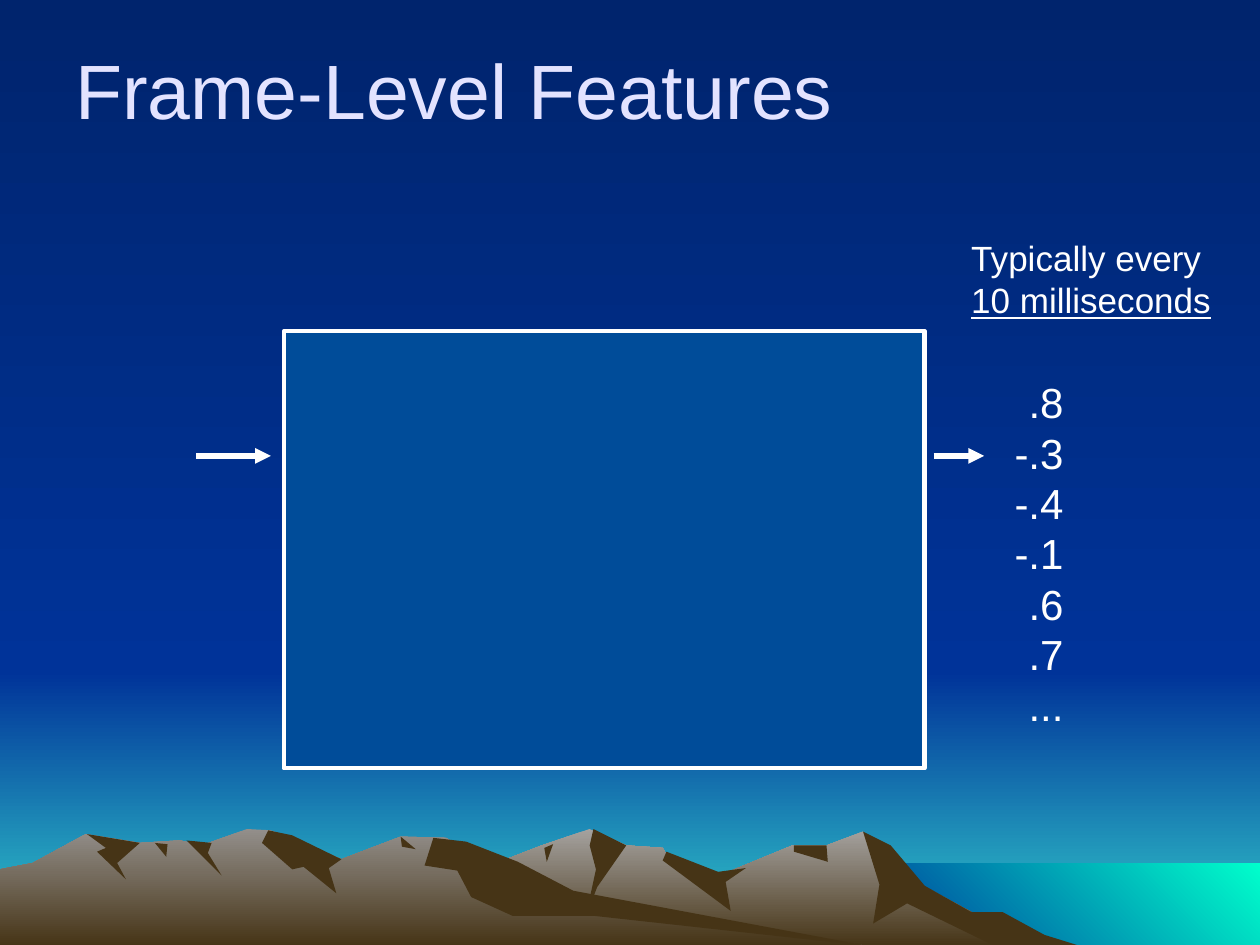
from lxml import etree
from pptx import Presentation
from pptx import util as u
from pptx.dml.color import RGBColor
from pptx.enum import shapes, text
from pptx.oxml import ns

Cm, Pt = u.Cm, u.Pt
WHITE = RGBColor.from_string("FFFFFF")
LAVENDER = RGBColor.from_string("E3E3FF")
NIGHT = RGBColor.from_string("00246D")
BLUE = RGBColor.from_string("003399")
TEAL = RGBColor.from_string("33CCCC")
AQUA = RGBColor.from_string("00FFCC")
PANEL = RGBColor.from_string("004C99")
BROWN = RGBColor.from_string("463416")
ROCK_RIGHT = RGBColor.from_string("A5A29F")
ROCK_LEFT = RGBColor.from_string("938F8B")

WIDTH, HEIGHT = 25.4, 19.05
HORIZON = 13.54
DOWN, UP_RIGHT = 270, 45
UNIT = Cm(2.54) / 100  # outline points are hundredths of an inch

# Each range: colour at the top, outline, shaded faces
RANGES = [
    (ROCK_RIGHT,
     [(258, 751), (327, 709), (394, 685), (430, 671), (468, 658), (497, 671),
      (526, 673), (536, 690), (566, 697), (629, 671), (656, 671), (685, 660),
      (723, 698), (821, 751)],
     [[(685, 660), (707, 671), (734, 703), (771, 724), (796, 724), (829, 742),
       (858, 751), (792, 752), (720, 717), (693, 733), (698, 702)],
      [(471, 658), (497, 671), (474, 704), (465, 727), (473, 690), (468, 671)],
      [(529, 676), (570, 692), (592, 689), (576, 700), (580, 723), (526, 683)],
      [(630, 671), (656, 671), (657, 684), (630, 676)],
      [(432, 673), (439, 670), (434, 684)]]),
    (ROCK_LEFT,
     [(0, 751), (0, 690), (26, 685), (68, 662), (111, 669), (143, 667),
      (160, 671), (196, 658), (215, 659), (271, 682), (318, 664), (354, 665),
      (432, 712), (690, 751)],
     [[(213, 659), (232, 663), (271, 682), (261, 689), (267, 709), (241, 688),
       (232, 690), (208, 669)],
      [(344, 665), (370, 668), (411, 684), (455, 707), (690, 751), (472, 727),
       (407, 727), (374, 712), (363, 691), (337, 687)],
      [(318, 664), (330, 674), (319, 672)],
      [(148, 667), (168, 669), (165, 677), (176, 695)],
      [(123, 669), (133, 670), (132, 680)],
      [(69, 662), (111, 669), (93, 685), (100, 698), (77, 676), (84, 673)]]),
]


def set_gradient(fill, start, end, angle):
    fill.gradient()
    fill.gradient_angle = angle
    for stop, color in zip(fill.gradient_stops, (start, end)):
        stop.color.rgb = color


def add_rect(slide, left, top, width, height):
    sp = slide.shapes.add_shape(shapes.MSO_SHAPE.RECTANGLE,
                                Cm(left), Cm(top), Cm(width), Cm(height))
    sp.shadow.inherit = False
    return sp


def add_band(slide, left, top, bottom, start, end, angle=DOWN):
    sp = add_rect(slide, left, top, WIDTH - left, bottom - top)
    set_gradient(sp.fill, start, end, angle)
    sp.line.fill.background()


def add_outline(slide, points):
    builder = slide.shapes.build_freeform(*points[0], scale=UNIT)
    builder.add_line_segments(points[1:], close=True)
    sp = builder.convert_to_shape()
    sp.shadow.inherit = False
    sp.line.fill.background()
    return sp


def add_range(slide, color, outline, faces):
    set_gradient(add_outline(slide, outline).fill, color, BROWN, DOWN)
    for face in faces:
        sp = add_outline(slide, face)
        sp.fill.solid()
        sp.fill.fore_color.rgb = BROWN


def add_box(slide, left):
    sp = add_rect(slide, left, 6.68, 12.9, 8.81)
    sp.fill.solid()
    sp.fill.fore_color.rgb = PANEL
    sp.line.color.rgb = WHITE
    sp.line.width = Pt(2.25)


def add_arrow(slide, x1, x2, y):
    line = slide.shapes.add_connector(shapes.MSO_CONNECTOR.STRAIGHT,
                                      Cm(x1), Cm(y), Cm(x2), Cm(y))
    line.line.color.rgb = WHITE
    line.line.width = Pt(3)
    sp_pr = line._element.spPr
    etree.SubElement(sp_pr.find(ns.qn("a:ln")), ns.qn("a:tailEnd"), type="triangle")
    etree.SubElement(sp_pr, ns.qn("a:effectLst"))


def add_text(slide, left, top, width, height, lines, size, color=WHITE,
             align=text.PP_ALIGN.LEFT, anchor=text.MSO_ANCHOR.TOP, wrap=True):
    tf = slide.shapes.add_textbox(Cm(left), Cm(top), Cm(width), Cm(height)).text_frame
    tf.word_wrap = wrap
    tf.vertical_anchor = anchor
    tf.text = "\n".join(lines)
    for p in tf.paragraphs:
        p.alignment = align
        p.font.name = "Arial"
        p.font.size = Pt(size)
        p.font.color.rgb = color
    return tf


def main():
    prs = Presentation()
    prs.slide_width, prs.slide_height = Cm(WIDTH), Cm(HEIGHT)
    slide = prs.slides.add_slide(prs.slide_layouts[6])

    # Sky, horizon and sea
    set_gradient(slide.background.fill, NIGHT, BLUE, DOWN)
    add_band(slide, 0, HORIZON, HEIGHT, BLUE, TEAL)
    add_band(slide, 0, 0, HORIZON, NIGHT, BLUE)
    add_band(slide, 17.35, 17.4, HEIGHT, BLUE, AQUA, UP_RIGHT)

    # Mountains
    for color, outline, faces in RANGES:
        add_range(slide, color, outline, faces)

    # Processing box, with its arrows in and out
    add_box(slide, 5.74)
    add_arrow(slide, 3.96, 5.46, 9.19)
    add_arrow(slide, 18.82, 19.84, 9.19)

    # Feature values
    add_text(slide, 19.15, 7.47, 2.54, 7.44,
             [".8", "-.3", "-.4", "-.1", ".6", ".7", "..."], 24,
             align=text.PP_ALIGN.RIGHT)

    # Title
    add_text(slide, 1.27, 0.2, 22.86, 3.18, ["Frame-Level Features"], 44,
             LAVENDER, anchor=text.MSO_ANCHOR.MIDDLE)

    # Cover over the processing box
    add_box(slide, 5.72)

    # Frame rate
    rate = add_text(slide, 19.33, 4.65, 5.38, 2.82,
                    ["Typically every", "10 milliseconds"], 20, wrap=False)
    rate.paragraphs[1].font.underline = True

    prs.save("out.pptx")


if __name__ == "__main__":
    main()
